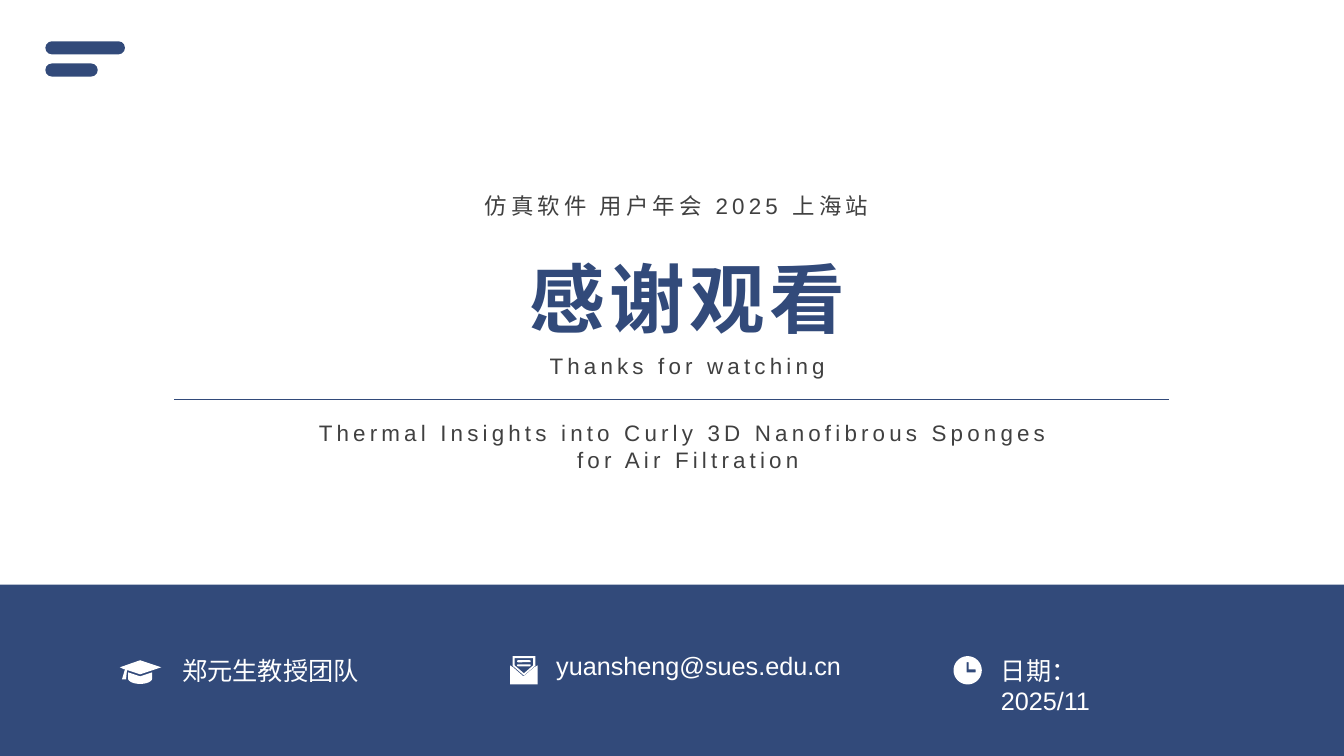
import math

import pptx
import pptx.dml.color
import pptx.enum.shapes
import pptx.enum.text
import pptx.oxml.ns
import pptx.util
from lxml import etree

NAVY = pptx.dml.color.RGBColor(0x32, 0x4A, 0x7A)
GREY = pptx.dml.color.RGBColor(0x40, 0x40, 0x40)
WHITE = pptx.dml.color.RGBColor(0xFF, 0xFF, 0xFF)
SHAPES = pptx.enum.shapes.MSO_SHAPE
LEFT = pptx.enum.text.PP_ALIGN.LEFT
CENTER = pptx.enum.text.PP_ALIGN.CENTER

SLIDE_WIDTH = pptx.util.Inches(13.33)
SLIDE_HEIGHT = pptx.util.Inches(7.5)
COLUMNS, ROWS = 160, 90

CAP_BOARD = [(2.4, 0), (4.92, 0.84), (3.84, 1.2), (2.4, 1.68), (0.96, 1.2),
             (0.84, 1.2), (0.72, 2.28), (0.24, 2.28), (0.6, 1.08), (0.72, 0.96),
             (0.48, 1.08), (0, 0.84)]
CAP_TOP = [(0.96, 1.44), (2.4, 1.92), (3.84, 1.44)]
CLOCK_HANDS = [(-0.12, -0.96), (0.12, -0.96), (0.12, -0.12),
               (0.96, -0.12), (0.96, 0.24), (-0.12, 0.24)]
ENVELOPE = [(0, 1.08), (0.36, 1.32), (1.6, 2.4), (2.88, 1.32),
            (3.3, 1.08), (3.3, 3.36), (0, 3.36)]
LETTER_OUTER = [(0.3, 0), (3, 0), (3, 1.14), (1.65, 2.3), (0.3, 1.14)]
LETTER_INNER = [(0.54, 0.24), (2.76, 0.24), (2.76, 1.08), (1.65, 2.04), (0.54, 1.08)]


def across(columns):
    return round(SLIDE_WIDTH * columns / COLUMNS)


def down(rows):
    return round(SLIDE_HEIGHT * rows / ROWS)


def arc(center_x, center_y, radius_x, radius_y, degrees, steps):
    angles = [math.radians(degrees * step / steps) for step in range(steps + 1)]
    return [(center_x + radius_x * math.cos(angle), center_y + radius_y * math.sin(angle))
            for angle in angles]


def paint(shape, color):
    shape.shadow.inherit = False
    shape.fill.solid()
    shape.fill.fore_color.rgb = color
    shape.line.fill.background()


def add_block(shapes, kind, column, row, width, height, color):
    shape = shapes.add_shape(kind, across(column), down(row), across(width), down(height))
    if kind == SHAPES.ROUNDED_RECTANGLE:
        shape.adjustments[0] = 0.5
    paint(shape, color)


def add_outline(shapes, column, row, contours):
    placed = [[(across(column + x), down(row + y)) for x, y in contour] for contour in contours]
    builder = shapes.build_freeform(*placed[0][0], scale=1.0)
    for index, contour in enumerate(placed):
        if index:
            builder.move_to(*contour[0])
        builder.add_line_segments(contour[1:], close=True)
    paint(builder.convert_to_shape(), WHITE)


def add_rule(shapes, start, end, row):
    line = shapes.add_connector(pptx.enum.shapes.MSO_CONNECTOR.STRAIGHT,
                                across(start), down(row), across(end), down(row))
    line.line.color.rgb = NAVY
    line.line.width = pptx.util.Pt(0.5)
    properties = line._element.spPr
    etree.SubElement(properties, pptx.oxml.ns.qn("a:effectLst"))


def add_text(shapes, column, row, width, height, lines, size, color,
             alignment=CENTER, wrap=False, bold=False, spacing=0):
    box = shapes.add_textbox(across(column), down(row), across(width), down(height))
    frame = box.text_frame
    frame.word_wrap = wrap
    for index, line in enumerate(lines):
        paragraph = frame.add_paragraph() if index else frame.paragraphs[0]
        paragraph.alignment = alignment
        run = paragraph.add_run()
        run.text = line
        run.font.name = "Arial"
        run.font.size = pptx.util.Pt(size)
        run.font.bold = bold
        run.font.color.rgb = color
        if spacing:
            run._r.get_or_add_rPr().set("spc", str(spacing * 100))


def add_headline(shapes, column, row, width, height, lines, wrap=False):
    add_text(shapes, column, row, width, height, lines, 16, GREY, wrap=wrap, spacing=3)


def add_contact(shapes, column, row, width, text, wrap=False):
    add_text(shapes, column, row, width, 4.8, [text], 18, WHITE, LEFT, wrap)


def add_menu_mark(shapes):
    bars = shapes.add_group_shape().shapes
    for row, width in ((4.92, 9.48), (7.56, 6.24)):
        add_block(bars, SHAPES.ROUNDED_RECTANGLE, 5.4, row, width, 1.56, NAVY)


def add_cap(shapes, column, row):
    gown = CAP_TOP + arc(2.4, 2.16, 1.44, 0.66, 180, 16)
    add_outline(shapes, column, row, [gown, CAP_BOARD])


def add_clock(shapes, column, row):
    add_outline(shapes, column, row, [arc(0, 0, 1.68, 1.68, 360, 60), CLOCK_HANDS])


def add_mail(shapes, column, row):
    parts = shapes.add_group_shape().shapes
    add_outline(parts, column, row, [ENVELOPE])
    add_outline(parts, column, row, [LETTER_OUTER, LETTER_INNER])
    for offset in (0.48, 0.96):
        add_block(parts, SHAPES.ROUNDED_RECTANGLE, column + 0.84, row + offset, 1.62, 0.24, WHITE)


def main():
    presentation = pptx.Presentation()
    presentation.slide_width = SLIDE_WIDTH
    presentation.slide_height = SLIDE_HEIGHT
    slide = presentation.slides.add_slide(presentation.slide_layouts[6])
    shapes = slide.shapes

    add_block(shapes, SHAPES.RECTANGLE, 0, 69.6, COLUMNS, 20.4, NAVY)
    add_text(shapes, 61.56, 29.4, 40.56, 12.12, ["感谢观看"], 54, NAVY, bold=True, spacing=3)
    add_headline(shapes, 63.24, 41.28, 37.2, 4.44, ["Thanks for watching"])
    add_rule(shapes, 20.76, 139.2, 47.52)
    add_menu_mark(shapes)
    add_headline(shapes, 35.28, 49.32, 93.24, 7.68,
                 ["Thermal Insights into Curly 3D Nanofibrous Sponges ", "for Air Filtration"],
                 wrap=True)
    add_headline(shapes, 41.4, 22.32, 78.24, 4.44, ["仿真软件 用户年会 2025 上海站"], wrap=True)

    add_cap(shapes, 14.28, 78.6)
    add_contact(shapes, 20.52, 77.4, 23.4, "郑元生教授团队")
    add_clock(shapes, 115.2, 79.8)
    add_contact(shapes, 117.96, 77.4, 20.4, "日期：2025/11", wrap=True)
    add_mail(shapes, 60.72, 78.12)
    add_contact(shapes, 65.04, 76.8, 62.52, "yuansheng@sues.edu.cn", wrap=True)

    presentation.save("out.pptx")


if __name__ == "__main__":
    main()
